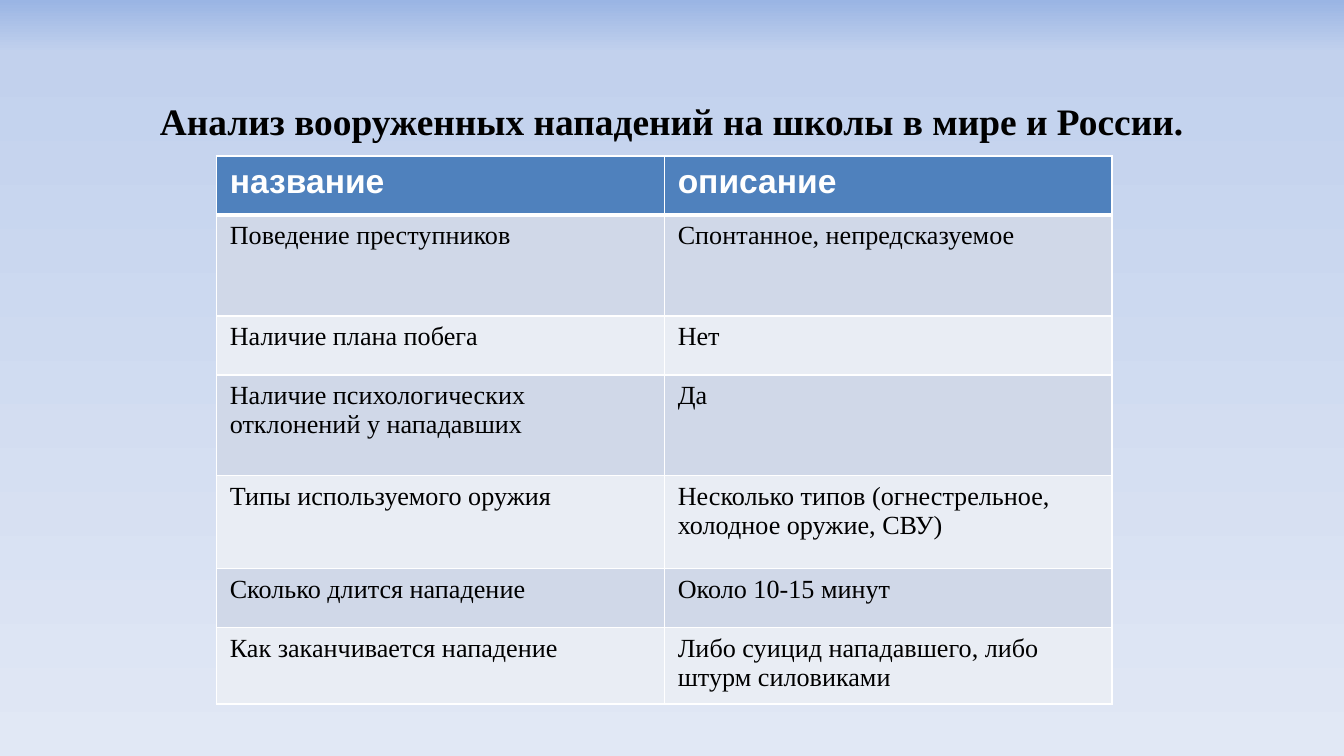
from copy import deepcopy

from lxml.etree import SubElement
from pptx import Presentation
from pptx.dml.color import RGBColor
from pptx.enum.text import MSO_ANCHOR, PP_ALIGN
from pptx.oxml.ns import qn
from pptx.util import Inches, Pt

TITLE = "Анализ вооруженных нападений на школы в мире и России."
HEADER = ("название", "описание")
ROWS = [
    ("Поведение преступников", "Спонтанное, непредсказуемое"),
    ("Наличие плана побега", "Нет"),
    ("Наличие психологических отклонений у нападавших", "Да"),
    ("Типы используемого оружия",
     "Несколько типов (огнестрельное, холодное оружие, СВУ)"),
    ("Сколько длится нападение", "Около 10-15 минут"),
    ("Как заканчивается нападение",
     "Либо суицид нападавшего, либо штурм силовиками"),
]
ROW_HEIGHTS = [0.44, 0.75, 0.44, 0.75, 0.69, 0.44, 0.44]
COLORS = {
    "header": "4F81BD", "odd": "D0D8E8", "even": "E9EDF4",
    "white": "FFFFFF", "black": "000000",
}
GRADIENT = [(0, "9AB5E4"), (0.07, "C2D1ED"), (1, "E1E8F5")]
HEADER_BORDERS = {"a:lnL": 1, "a:lnR": 1, "a:lnT": 1, "a:lnB": 3}

WIDTH = 10
HEIGHT = WIDTH * 9 / 16
MARGIN = WIDTH * 0.05
TITLE_TOP, TITLE_HEIGHT = 0.23, 0.88
TABLE_LEFT, TABLE_TOP = 1.61, 1.16
COLUMN_WIDTH = WIDTH / 3


def format_text(paragraph, font_name, size, color, bold):
    for run in paragraph.runs:
        font = run.font
        font.name, font.size, font.bold = font_name, Pt(size), bold
        font.color.rgb = RGBColor.from_string(COLORS[color])


def paint_background(slide):
    fill = slide.background.fill
    fill.gradient()
    fill.gradient_angle = 270
    stop_list = slide.element.find(".//" + qn("a:gsLst"))
    stop_list.append(deepcopy(stop_list[-1]))
    for stop, (position, color) in zip(fill.gradient_stops, GRADIENT):
        stop.position = position
        stop.color.rgb = RGBColor.from_string(color)


def add_title(slide):
    box = slide.shapes.add_textbox(
        Inches(MARGIN), Inches(TITLE_TOP),
        Inches(WIDTH - 2 * MARGIN), Inches(TITLE_HEIGHT))
    frame = box.text_frame
    frame.word_wrap = True
    frame.vertical_anchor = MSO_ANCHOR.BOTTOM
    frame.text = TITLE
    paragraph = frame.paragraphs[0]
    paragraph.alignment = PP_ALIGN.CENTER
    format_text(paragraph, "Times New Roman", 20, "black", True)


def add_header_borders(cell):
    """Draw white cell borders; call before the fill is set."""
    properties = cell._tc.get_or_add_tcPr()
    for tag, width in HEADER_BORDERS.items():
        line = SubElement(properties, qn(tag), w=str(Pt(width)))
        solid = SubElement(line, qn("a:solidFill"))
        SubElement(solid, qn("a:srgbClr"), val=COLORS["white"])


def add_analysis_table(slide):
    content = [HEADER, *ROWS]
    table = slide.shapes.add_table(
        len(content), len(HEADER), Inches(TABLE_LEFT), Inches(TABLE_TOP),
        Inches(COLUMN_WIDTH * len(HEADER)), Inches(sum(ROW_HEIGHTS))).table
    for index, (texts, height) in enumerate(zip(content, ROW_HEIGHTS)):
        table.rows[index].height = Inches(height)
        if index == 0:
            fill, style = "header", ("Arial", 18, "white", True)
        else:
            fill = "odd" if index % 2 else "even"
            style = ("Times New Roman", 14, "black", False)
        for cell, text in zip(table.rows[index].cells, texts):
            if index == 0:
                add_header_borders(cell)
            cell.fill.solid()
            cell.fill.fore_color.rgb = RGBColor.from_string(COLORS[fill])
            cell.text_frame.text = text
            format_text(cell.text_frame.paragraphs[0], *style)


def main():
    presentation = Presentation()
    presentation.slide_width = Inches(WIDTH)
    presentation.slide_height = Inches(HEIGHT)
    slide = presentation.slides.add_slide(presentation.slide_layouts[6])
    paint_background(slide)
    add_title(slide)
    add_analysis_table(slide)
    presentation.save("out.pptx")


if __name__ == "__main__":
    main()
